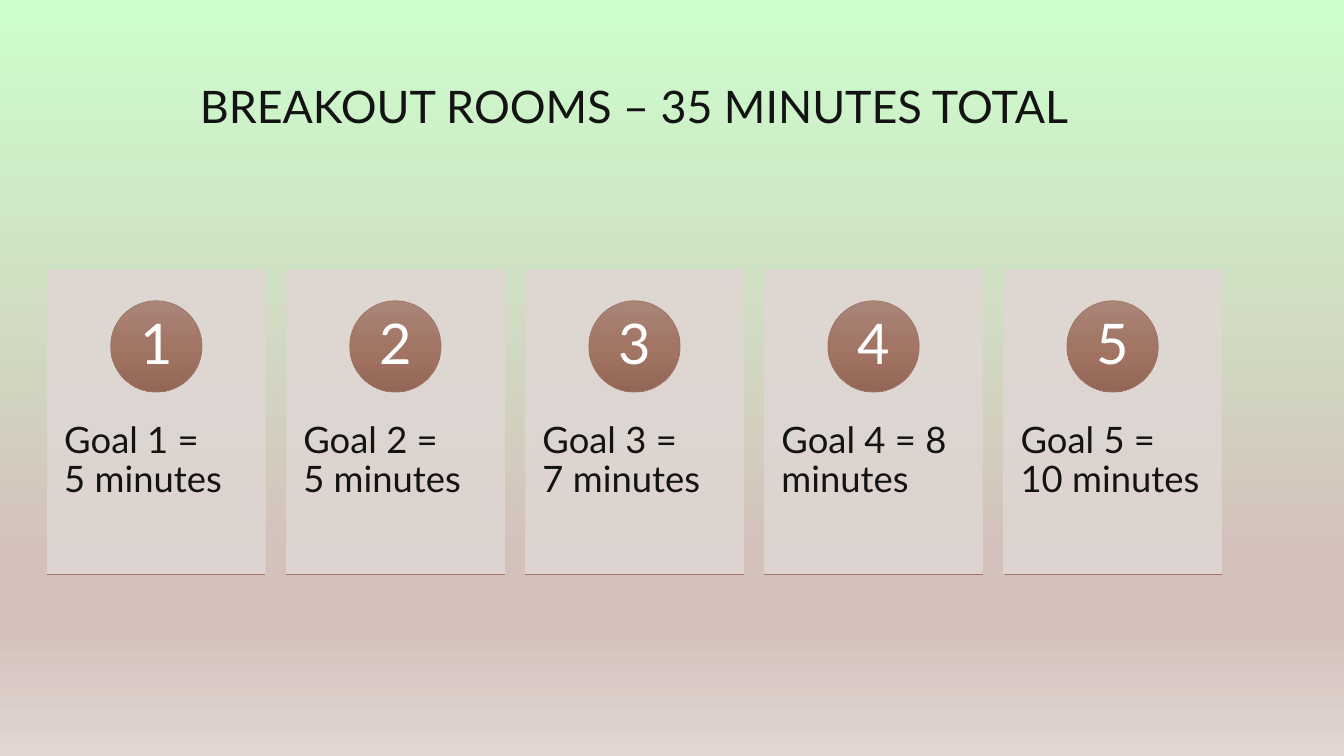
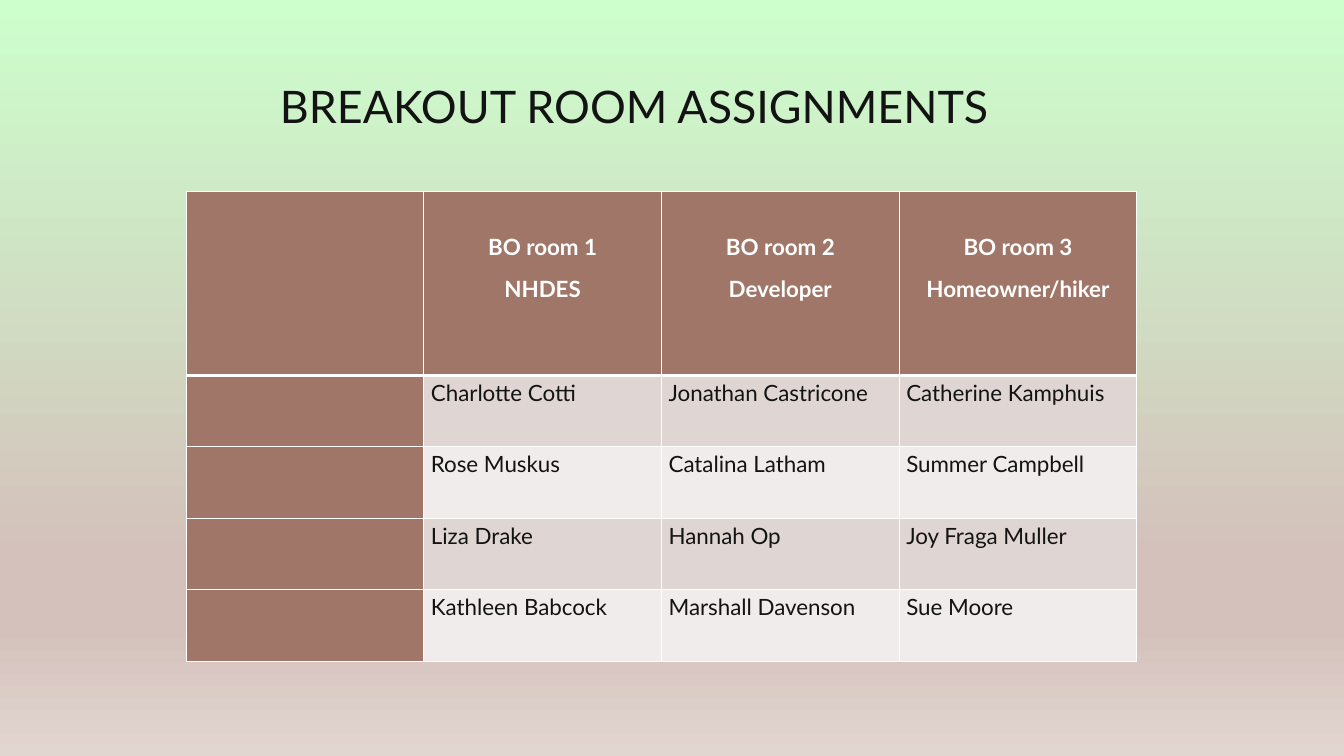
from lxml.etree import SubElement
from pptx import Presentation
from pptx.dml.color import RGBColor
from pptx.enum.shapes import MSO_CONNECTOR, MSO_SHAPE
from pptx.enum.text import MSO_ANCHOR, PP_ALIGN
from pptx.oxml.ns import qn
from pptx.util import Cm, Pt

# Shared style
FONT = "Lato"
INK, WHITE = "131313", "FFFFFF"
BROWN, PALE, PALER = "9F7667", "DFD6D3", "F0ECEB"
BACKDROP = [(0, "CCFFCC"), (74, "D4C1BB"), (83, "D4C1BB"), (100, "E2D6D1")]
BADGE = [(0, "A9867A"), (50, "A27564"), (100, "936656")]
LEFT, WIDTH = 1.19, 29.6


def color(hex_string):
    return RGBColor.from_string(hex_string)


def add_solid(parent, hex_string):
    SubElement(SubElement(parent, qn("a:solidFill")), qn("a:srgbClr"), val=hex_string)


def fill_gradient(fill, element, stops):
    """Fill from top to bottom with any number of (percent, colour) stops."""
    fill.gradient()
    fill.gradient_angle = 270
    stop_list = next(element.iter(qn("a:gsLst")))
    for old_stop in list(stop_list):
        stop_list.remove(old_stop)
    for percent, hex_string in stops:
        stop = SubElement(stop_list, qn("a:gs"), pos=str(percent * 1000))
        SubElement(stop, qn("a:srgbClr"), val=hex_string)


def write(frame, text, size=16, ink=INK, bold=False, align=PP_ALIGN.LEFT,
          spacing=0.9, after=0, anchor=MSO_ANCHOR.TOP, margins=None):
    """Write one paragraph per line; margins are left, top, right, bottom in cm."""
    frame.word_wrap = True
    frame.vertical_anchor = anchor
    if margins:
        (frame.margin_left, frame.margin_top,
         frame.margin_right, frame.margin_bottom) = map(Cm, margins)
    for index, line in enumerate(text.split("\n")):
        paragraph = frame.add_paragraph() if index else frame.paragraphs[0]
        paragraph.text = line
        paragraph.alignment = align
        paragraph.line_spacing = spacing
        paragraph.space_after = Pt(after)
        for run in paragraph.runs:
            run.font.name = FONT
            run.font.size = Pt(size)
            run.font.bold = bold
            run.font.color.rgb = color(ink)


class Deck:
    def __init__(self):
        self.prs = Presentation()
        self.prs.slide_width, self.prs.slide_height = Cm(33.87), Cm(19.05)
        master = self.prs.slide_master
        fill_gradient(master.background.fill, master._element, BACKDROP)
        self.slide = None

    def start_slide(self, title):
        self.slide = self.prs.slides.add_slide(self.prs.slide_layouts[6])
        self.text(LEFT, 0.78, WIDTH, 2.7, title, size=32, align=PP_ALIGN.CENTER,
                  anchor=MSO_ANCHOR.BOTTOM)

    def text(self, left, top, width, height, text, **style):
        box = self.slide.shapes.add_textbox(
            Cm(left), Cm(top), Cm(width), Cm(height))
        write(box.text_frame, text, **style)

    def shape(self, kind, left, top, width, height, outline):
        shape = self.slide.shapes.add_shape(
            kind, Cm(left), Cm(top), Cm(width), Cm(height))
        shape.shadow.inherit = False
        shape.line.color.rgb = color(outline)
        shape.line.width = Pt(0.5)
        return shape

    def panel(self, left, top, width, height):
        """Nearly opaque card with a thin rule along its foot."""
        panel = self.shape(MSO_SHAPE.RECTANGLE, left, top, width, height, PALE)
        panel.fill.solid()
        panel.fill.fore_color.rgb = color(PALE)
        for tint in panel._element.spPr.iter(qn("a:srgbClr")):
            SubElement(tint, qn("a:alpha"), val="90000")
        self.rule(left, top + height, width)

    def rule(self, left, top, width):
        rule = self.slide.shapes.add_connector(
            MSO_CONNECTOR.STRAIGHT, Cm(left), Cm(top), Cm(left + width), Cm(top))
        rule.line.color.rgb = color(BROWN)
        rule.line.width = Pt(0.5)
        SubElement(rule._element.spPr, qn("a:effectLst"))

    def badge(self, left, top, diameter, text):
        badge = self.shape(MSO_SHAPE.OVAL, left, top, diameter, diameter, BROWN)
        fill_gradient(badge.fill, badge._element.spPr, BADGE)
        write(badge.text_frame, text, size=40, ink=WHITE, align=PP_ALIGN.CENTER,
              anchor=MSO_ANCHOR.MIDDLE, margins=(0, 0, 0, 0))

    def table(self, left, top, column_width, heights, rows):
        """Table with a brown header row and first column, and banded body rows."""
        columns = len(rows[0])
        table = self.slide.shapes.add_table(
            len(rows), columns, Cm(left), Cm(top),
            Cm(column_width * columns), Cm(sum(heights))).table
        for column in table.columns:
            column.width = Cm(column_width)
        for r, (height, texts) in enumerate(zip(heights, rows)):
            table.rows[r].height = Cm(height)
            for c, text in enumerate(texts):
                band = PALE if r % 2 else PALER
                self.cell(table.cell(r, c), text, header=r == 0,
                          fill=band if r and c else BROWN,
                          top=3 if r == 1 else 1, bottom=1 if r else 3)

    def cell(self, cell, text, header, fill, top, bottom):
        properties = cell._tc.get_or_add_tcPr()
        for side, points in (("L", 1), ("R", 1), ("T", top), ("B", bottom)):
            border = SubElement(properties, qn("a:ln" + side), w=str(Pt(points)))
            add_solid(border, WHITE)
        cell.fill.solid()
        cell.fill.fore_color.rgb = color(fill)
        write(cell.text_frame, text, ink=WHITE if header else INK, bold=header,
              align=PP_ALIGN.CENTER if header else PP_ALIGN.LEFT,
              spacing=1.15, after=8)
        cell.vertical_anchor = MSO_ANCHOR.TOP
        cell.margin_left = cell.margin_right = Cm(0.18)
        cell.margin_top = Cm(0.96 if header else 0)
        cell.margin_bottom = 0


def main():
    deck = Deck()

    # Time for each goal
    deck.start_slide("BREAKOUT ROOMS – 35 MINUTES TOTAL")
    goals = ["Goal 1 =\v5 minutes", "Goal 2 =\v5 minutes", "Goal 3 =\v7 minutes",
             "Goal 4 = 8\vminutes", "Goal 5 =\v10 minutes"]
    card_width, badge_size = 5.5, 2.3
    pitch = (WIDTH - card_width) / (len(goals) - 1)
    for index, goal in enumerate(goals):
        left = LEFT + index * pitch
        deck.panel(left, 6.8, card_width, 7.68)
        deck.badge(left + (card_width - badge_size) / 2, 7.58, badge_size,
                   str(index + 1))
        deck.text(left, 10.64, card_width, 2.9, goal, size=26,
                  margins=(0.43, 0, 0.43, 0))

    # People in each room
    deck.start_slide("BREAKOUT ROOM ASSIGNMENTS")
    rooms = [
        ["", "BO room 1\nNHDES", "BO room 2\nDeveloper", "BO room 3\nHomeowner/hiker"],
        ["", "Charlotte Cotti", "Jonathan Castricone", "Catherine Kamphuis"],
        ["", "Rose Muskus", "Catalina Latham", "Summer Campbell"],
        ["", "Liza Drake", "Hannah Op", "Joy Fraga Muller"],
        ["", "Kathleen Babcock", "Marshall Davenson", "Sue Moore"],
    ]
    deck.table(4.69, 4.83, 5.99, [4.63] + [1.8] * 4, rooms)

    deck.prs.save("out.pptx")


if __name__ == "__main__":
    main()
